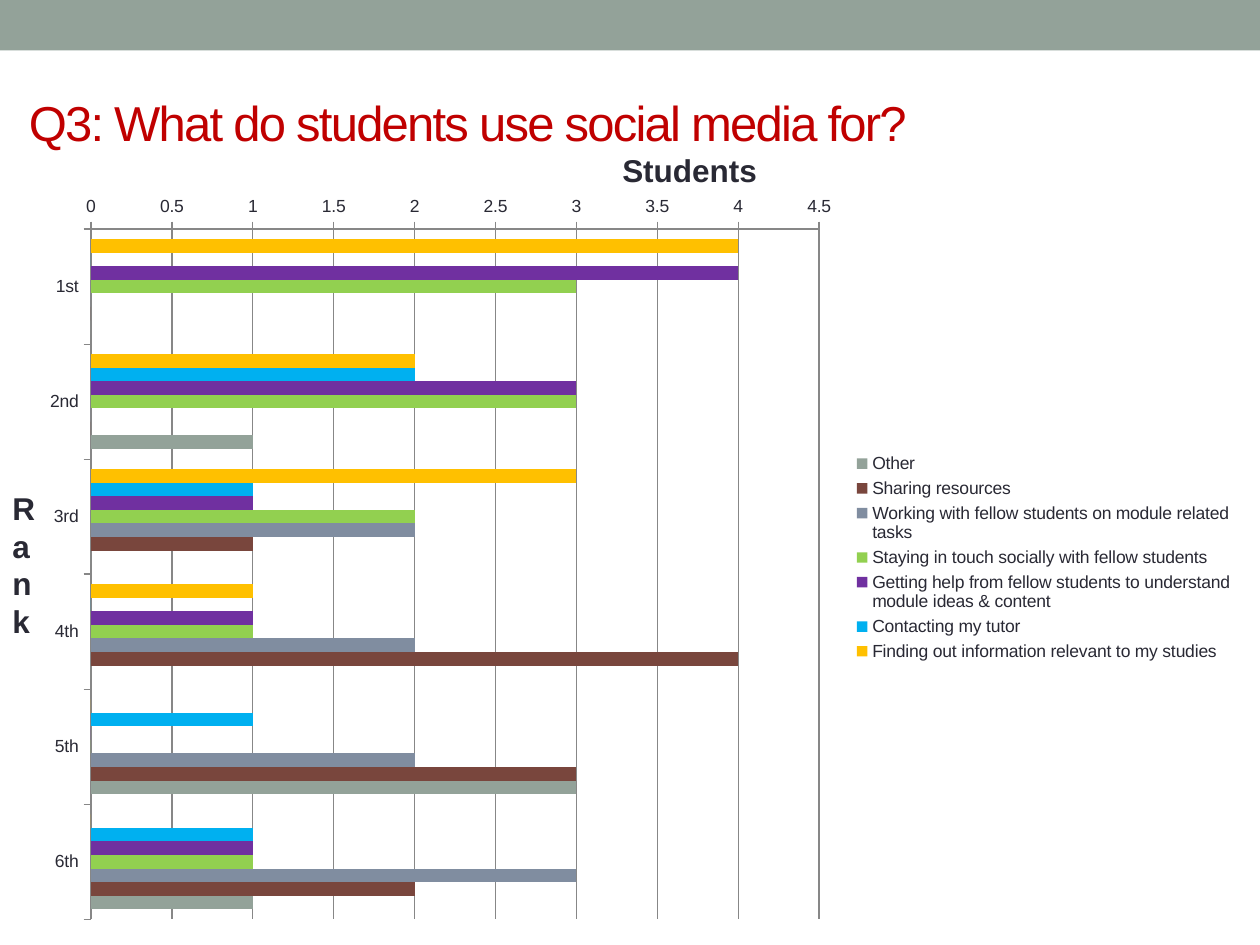
from pptx import Presentation
from pptx.chart.data import CategoryChartData
from pptx.dml.color import RGBColor
from pptx.enum.chart import XL_CHART_TYPE, XL_LEGEND_POSITION, XL_TICK_MARK
from pptx.enum.shapes import MSO_SHAPE
from pptx.enum.text import MSO_ANCHOR
from pptx.oxml import parse_xml
from pptx.oxml.ns import nsdecls
from pptx.util import Inches, Pt

INK = RGBColor(0x29, 0x29, 0x34)
RED = RGBColor(0xC0, 0x00, 0x00)
SAGE = RGBColor(0x93, 0xA2, 0x99)
GRAY = RGBColor(0x87, 0x87, 0x87)
GOLD = RGBColor(0xFF, 0xC0, 0x00)
SKY = RGBColor(0x00, 0xB0, 0xF0)
PLUM = RGBColor(0x70, 0x30, 0xA0)
LIME = RGBColor(0x92, 0xD0, 0x50)
SLATE = RGBColor(0x80, 0x8D, 0xA0)
RUST = RGBColor(0x79, 0x46, 0x3D)

RANKS = ["1st", "2nd", "3rd", "4th", "5th", "6th"]
USES = [
    ("Finding out information relevant to my studies", GOLD, (4, 2, 3, 1, 0, 0)),
    ("Contacting my tutor", SKY, (0, 2, 1, 0, 1, 1)),
    ("Getting help from fellow students to understand module ideas & content",
     PLUM, (4, 3, 1, 1, 0, 1)),
    ("Staying in touch socially with fellow students", LIME, (3, 3, 2, 1, 0, 1)),
    ("Working with fellow students on module related tasks",
     SLATE, (0, 0, 2, 2, 2, 3)),
    ("Sharing resources", RUST, (0, 0, 1, 4, 3, 2)),
    ("Other", SAGE, (0, 1, 0, 0, 3, 1)),
]
PLOT = {"x": 0.045, "y": 0.059, "w": 0.602, "h": 0.927}


class Deck:
    """Holds the style and the current slide, on a grid of 100 columns by 75 rows."""

    font = "Arial"
    unit = Inches(0.1)

    def __init__(self):
        self.prs = Presentation()
        self.prs.slide_width = 100 * self.unit
        self.prs.slide_height = 75 * self.unit
        self.slide = self.prs.slides.add_slide(self.prs.slide_layouts[6])

    def place(self, *box):
        return [round(side * self.unit) for side in box]

    def style(self, font, size, color=INK, bold=False):
        font.name, font.size, font.bold = self.font, Pt(size), bold
        font.color.rgb = color

    def band(self, box, color):
        shape = self.slide.shapes.add_shape(MSO_SHAPE.RECTANGLE, *self.place(*box))
        shape.shadow.inherit = False
        shape.fill.solid()
        shape.fill.fore_color.rgb = color
        shape.line.fill.background()

    def text(self, box, lines, size, color=INK, bold=False, anchor=MSO_ANCHOR.TOP, space=0):
        frame = self.slide.shapes.add_textbox(*self.place(*box)).text_frame
        frame.word_wrap = True
        frame.vertical_anchor = anchor
        frame.text = "\n".join(lines)
        for para in frame.paragraphs:
            self.style(para.font, size, color, bold)
            if space:
                para.runs[0]._r.get_or_add_rPr().set("spc", str(space))

    def chart(self, box, names, rows, plot):
        data = CategoryChartData(number_format="General")
        data.categories = names
        for name, _, vals in rows:
            data.add_series(name, vals)
        chart = self.slide.shapes.add_chart(
            XL_CHART_TYPE.BAR_CLUSTERED, *self.place(*box), data).chart
        self.style(chart.font, 10)
        chart.has_title = False
        chart.has_legend = True
        chart.legend.position = XL_LEGEND_POSITION.RIGHT
        chart.legend.include_in_layout = False
        bars = chart.plots[0]
        bars.gap_width, bars.overlap, bars.vary_by_categories = 150, 0, False
        for bar, (_, color, _) in zip(bars.series, rows):
            bar.format.fill.solid()
            bar.format.fill.fore_color.rgb = color
        self.axes(chart)
        self.layout(chart, plot)

    def axes(self, chart):
        cat, val = chart.category_axis, chart.value_axis
        cat.reverse_order = True
        cat.has_major_gridlines = False
        val.has_major_gridlines = True
        val.minimum_scale, val.maximum_scale, val.major_unit = 0, 4.5, 0.5
        for axis in (cat, val):
            axis.major_tick_mark = XL_TICK_MARK.OUTSIDE
            axis.format.line.color.rgb = GRAY
        val.major_gridlines.format.line.color.rgb = GRAY

    def layout(self, chart, plot):
        area = chart._chartSpace.chart.plotArea
        for old in area.findall("{*}layout"):
            area.remove(old)
        sides = "".join(f'<c:{key} val="{share}"/>' for key, share in plot.items())
        area.insert(0, parse_xml(
            f'<c:layout {nsdecls("c")}><c:manualLayout>'
            '<c:layoutTarget val="inner"/><c:xMode val="edge"/><c:yMode val="edge"/>'
            f'{sides}</c:manualLayout></c:layout>'))


def main():
    deck = Deck()
    deck.band((0, 0, 100, 4), SAGE)
    deck.chart((2.9, 14.7, 96, 59.1), RANKS, USES, PLOT)
    deck.text((1.3, 6.8, 97.5, 5.7), ["Q3: What do students use social media for?"],
              28, RED, anchor=MSO_ANCHOR.MIDDLE, space=-100)
    deck.text((48.4, 11.5, 18.1, 4), ["Students"], 18, bold=True)
    deck.text((0, 38.3, 3.1, 13.1), "Rank", 18, bold=True)
    deck.prs.save("out.pptx")


if __name__ == "__main__":
    main()
